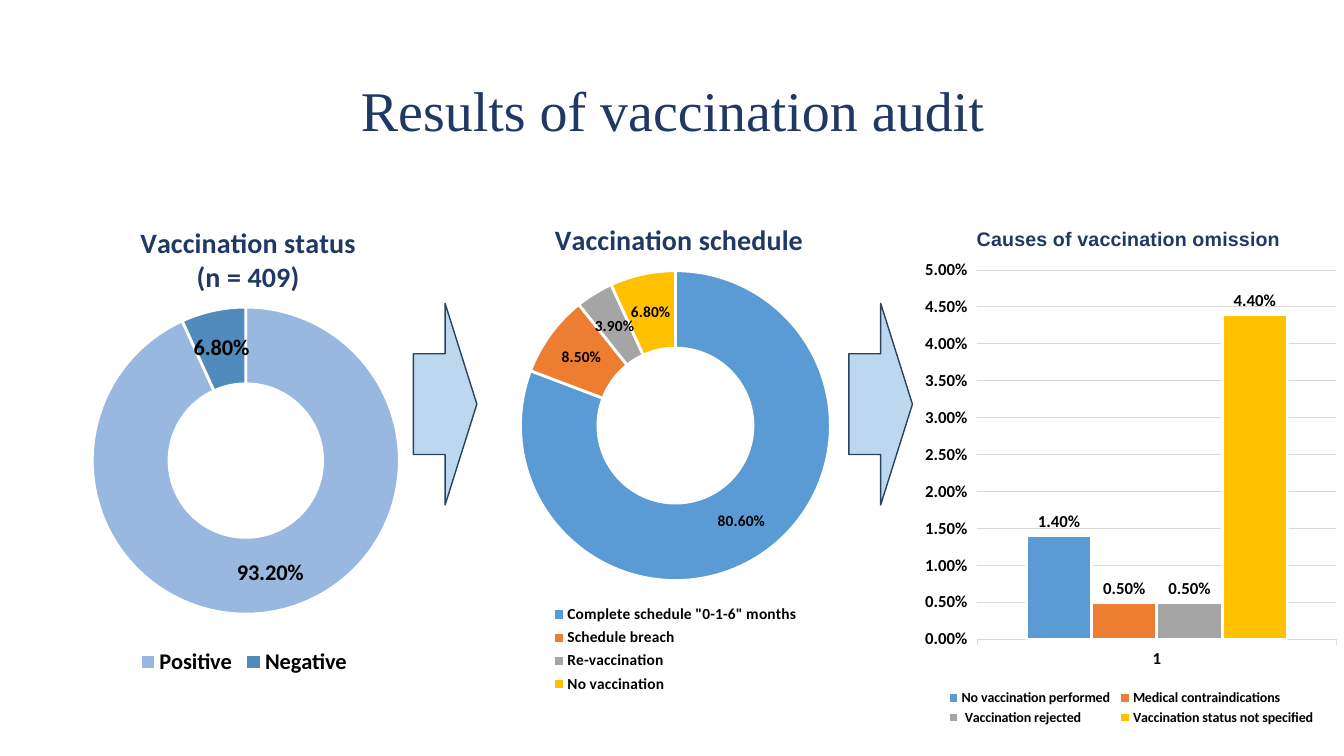
from lxml import etree
from pptx import Presentation
from pptx.chart.data import CategoryChartData
from pptx.dml.color import RGBColor
from pptx.enum.chart import XL_CHART_TYPE, XL_LABEL_POSITION, XL_LEGEND_POSITION, XL_TICK_MARK
from pptx.enum.shapes import MSO_SHAPE
from pptx.enum.text import MSO_ANCHOR, PP_ALIGN
from pptx.oxml.ns import qn
from pptx.util import Inches, Pt

DOUGHNUT = XL_CHART_TYPE.DOUGHNUT
COLUMN = XL_CHART_TYPE.COLUMN_CLUSTERED
OUTSIDE_END = XL_LABEL_POSITION.OUTSIDE_END
LEGEND_BOTTOM = XL_LEGEND_POSITION.BOTTOM
TICK_OUTSIDE = XL_TICK_MARK.OUTSIDE
RIGHT_ARROW = MSO_SHAPE.RIGHT_ARROW
MIDDLE = MSO_ANCHOR.MIDDLE
CENTER = PP_ALIGN.CENTER

NAVY = RGBColor(0x20, 0x38, 0x64)
BLACK = RGBColor(0, 0, 0)
WHITE = RGBColor(0xFF, 0xFF, 0xFF)
GRID_GRAY = RGBColor(0xD9, 0xD9, 0xD9)
ARROW_FILL = RGBColor(0xBD, 0xD7, 0xEE)
ARROW_LINE = RGBColor(0x28, 0x44, 0x5D)
STATUS_COLORS = [RGBColor(0x98, 0xB8, 0xE0), RGBColor(0x51, 0x8A, 0xBD)]
SERIES_COLORS = [
    RGBColor(0x5B, 0x9B, 0xD5),
    RGBColor(0xED, 0x7D, 0x31),
    RGBColor(0xA5, 0xA5, 0xA5),
    RGBColor(0xFF, 0xC0, 0x00),
]
PERCENT = "0.00%"


class AuditSlide:
    """Holds the slide and its style, and adds each kind of element."""

    body_font = "Calibri"

    def __init__(self, presentation):
        self.slide = presentation.slides.add_slide(presentation.slide_layouts[5])

    def style_font(self, font, size, color=BLACK, name=body_font, bold=True):
        font.size = Pt(size)
        font.bold = bold
        font.name = name
        font.color.rgb = color

    def paint(self, chart_format, color):
        chart_format.fill.solid()
        chart_format.fill.fore_color.rgb = color
        chart_format.line.color.rgb = WHITE
        chart_format.line.width = Pt(2)

    def add_title(self, text, box):
        title = self.slide.shapes.title
        title.left, title.top, title.width, title.height = map(Inches, box)
        title.text_frame.text = text
        title.text_frame.vertical_anchor = MIDDLE
        paragraph = title.text_frame.paragraphs[0]
        paragraph.alignment = CENTER
        paragraph.line_spacing = 0.9
        self.style_font(paragraph.runs[0].font, 40, NAVY, "Times New Roman", False)

    def add_arrow(self, left):
        arrow = self.slide.shapes.add_shape(
            RIGHT_ARROW, Inches(left), Inches(3.01), Inches(0.63), Inches(2))
        arrow.shadow.inherit = False
        arrow.fill.solid()
        arrow.fill.fore_color.rgb = ARROW_FILL
        arrow.line.color.rgb = ARROW_LINE
        arrow.line.width = Pt(1)

    def place(self, element, position, index, inner=False):
        for old_layout in element.findall(qn("c:layout")):
            element.remove(old_layout)
        layout = etree.Element(qn("c:layout"))
        manual = etree.SubElement(layout, qn("c:manualLayout"))
        if inner:
            etree.SubElement(manual, qn("c:layoutTarget"), val="inner")
        for axis in ("x", "y"):
            etree.SubElement(manual, qn(f"c:{axis}Mode"), val="edge")
        for name, value in zip("xywh", position):
            etree.SubElement(manual, qn(f"c:{name}"), val=str(value))
        element.insert(index, layout)

    def add_chart(self, kind, box, categories, series, title, size, legend_size,
                  title_size, layouts, title_font=body_font):
        data = CategoryChartData(number_format=PERCENT)
        data.categories = categories
        for name, values in series:
            data.add_series(name, values)
        chart = self.slide.shapes.add_chart(kind, *map(Inches, box), data).chart
        self.style_font(chart.font, size)

        chart.has_title = True
        chart.chart_title.text_frame.text = title
        for paragraph in chart.chart_title.text_frame.paragraphs:
            paragraph.alignment = CENTER
            self.style_font(paragraph.runs[0].font, title_size, NAVY, title_font)

        chart.has_legend = True
        chart.legend.position = LEGEND_BOTTOM
        chart.legend.include_in_layout = False
        self.style_font(chart.legend.font, legend_size)

        for chart_series in chart.plots[0].series:
            labels = chart_series.data_labels
            labels.show_value = True
            labels.number_format = PERCENT
            labels.number_format_is_linked = False
            self.style_font(labels.font, size)

        root = chart._chartSpace.chart
        title_position, plot_position, legend_position = layouts
        self.place(root.find(qn("c:title")), title_position, 1)
        self.place(root.find(qn("c:plotArea")), plot_position, 0, inner=True)
        self.place(root.find(qn("c:legend")), legend_position, 1)
        return chart

    def add_doughnut(self, box, shares, colors, **style):
        series = [("Series 1", list(shares.values()))]
        chart = self.add_chart(DOUGHNUT, box, list(shares), series, **style)
        plot = chart.plots[0]
        plot.vary_by_categories = True
        for index, color in enumerate(colors):
            self.paint(plot.series[0].points[index].format, color)
        next(chart._chartSpace.iter(qn("c:holeSize"))).set("val", "75")

    def add_columns(self, box, shares, colors, **style):
        series = [(name, [value]) for name, value in shares.items()]
        chart = self.add_chart(COLUMN, box, ["1"], series, **style)
        plot = chart.plots[0]
        plot.vary_by_categories = False
        plot.gap_width = 150
        for chart_series, color in zip(plot.series, colors):
            self.paint(chart_series.format, color)
            chart_series.data_labels.position = OUTSIDE_END
        category_axis, value_axis = chart.category_axis, chart.value_axis
        for axis in (category_axis, value_axis):
            axis.major_tick_mark = TICK_OUTSIDE
            self.style_font(axis.tick_labels.font, style["size"])
        value_axis.minimum_scale = 0
        value_axis.maximum_scale = 0.05
        value_axis.major_unit = 0.005
        value_axis.tick_labels.number_format = PERCENT
        value_axis.tick_labels.number_format_is_linked = False
        value_axis.format.line.fill.background()
        for line in (category_axis.format.line, value_axis.major_gridlines.format.line):
            line.color.rgb = GRID_GRAY
            line.width = Pt(0.75)


def main():
    presentation = Presentation()
    presentation.slide_width = Inches(13.33)
    presentation.slide_height = Inches(7.5)
    audit = AuditSlide(presentation)
    audit.add_title("Results of vaccination audit", (0.92, 0.4, 11.5, 1.45))

    audit.add_doughnut(
        (0.53, 2, 3.78, 4.76), {"Positive": 0.932, "Negative": 0.068}, STATUS_COLORS,
        title="Vaccination status\n(n = 409)", size=16, legend_size=16, title_size=20,
        layouts=[(0.22, 0.04), (0.1, 0.22, 0.81, 0.64), (0.21, 0.92, 0.58, 0.08)])
    audit.add_arrow(4.1)

    schedule = {
        'Complete schedule "0-1-6" months': 0.806,
        "Schedule breach": 0.085,
        "Re-vaccination": 0.039,
        "No vaccination": 0.068,
    }
    audit.add_doughnut(
        (4.55, 1.88, 4.3, 5.04), schedule, SERIES_COLORS,
        title="Vaccination schedule", size=11, legend_size=11, title_size=20,
        layouts=[(0.21, 0.05), (0.14, 0.16, 0.72, 0.61), (0.21, 0.81, 0.58, 0.19)])
    audit.add_arrow(8.42)

    causes = {
        "No vaccination performed": 0.014,
        "Medical contraindications": 0.005,
        " Vaccination rejected": 0.005,
        "Vaccination status not specified": 0.044,
    }
    audit.add_columns(
        (9.1, 2, 4.24, 5.23), causes, SERIES_COLORS,
        title="Causes of vaccination omission", size=12, legend_size=10, title_size=14,
        title_font="Arial",
        layouts=[(0.13, 0.04), (0.14, 0.13, 0.84, 0.7), (0.06, 0.92, 0.88, 0.08)])

    presentation.save("out.pptx")


if __name__ == "__main__":
    main()
